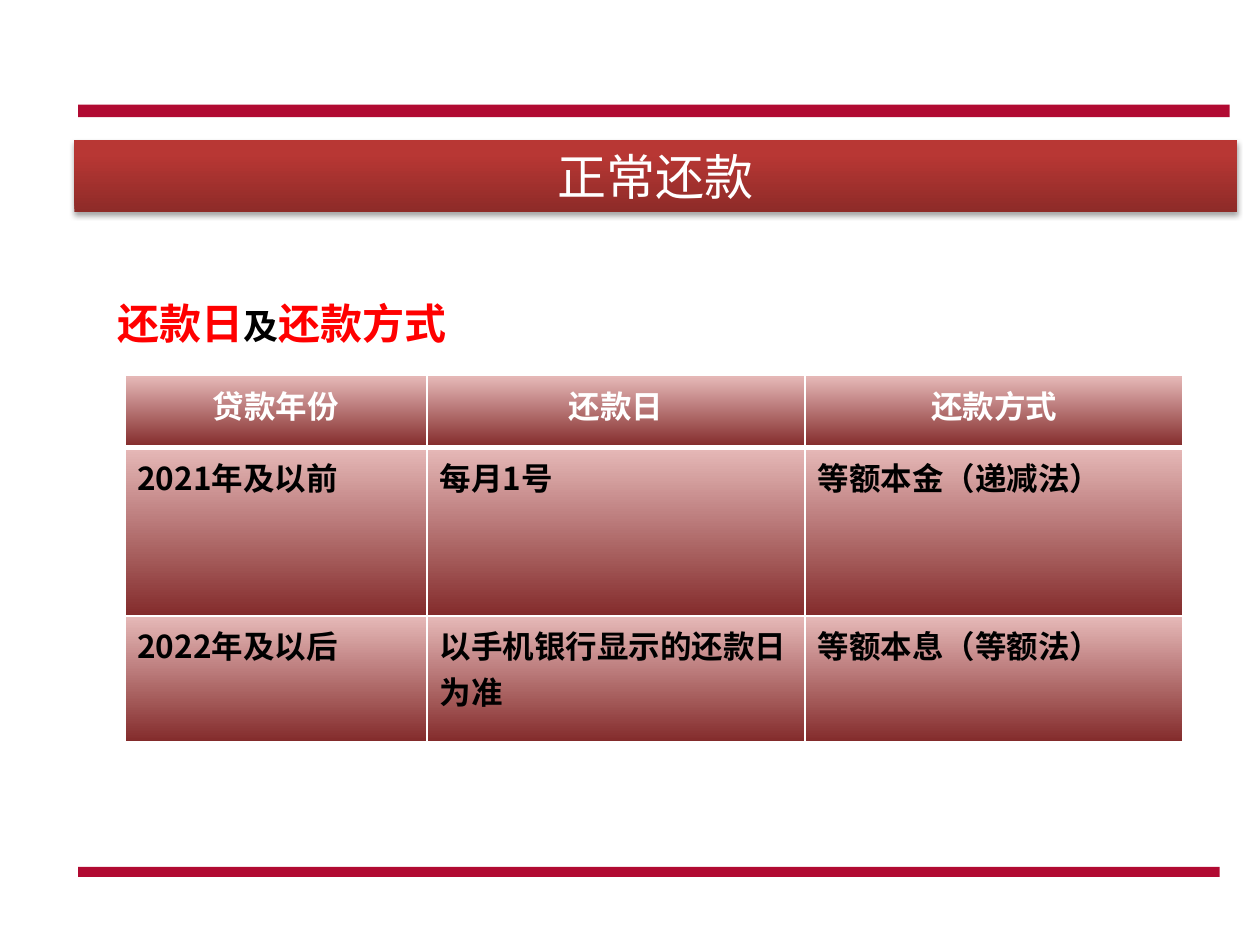
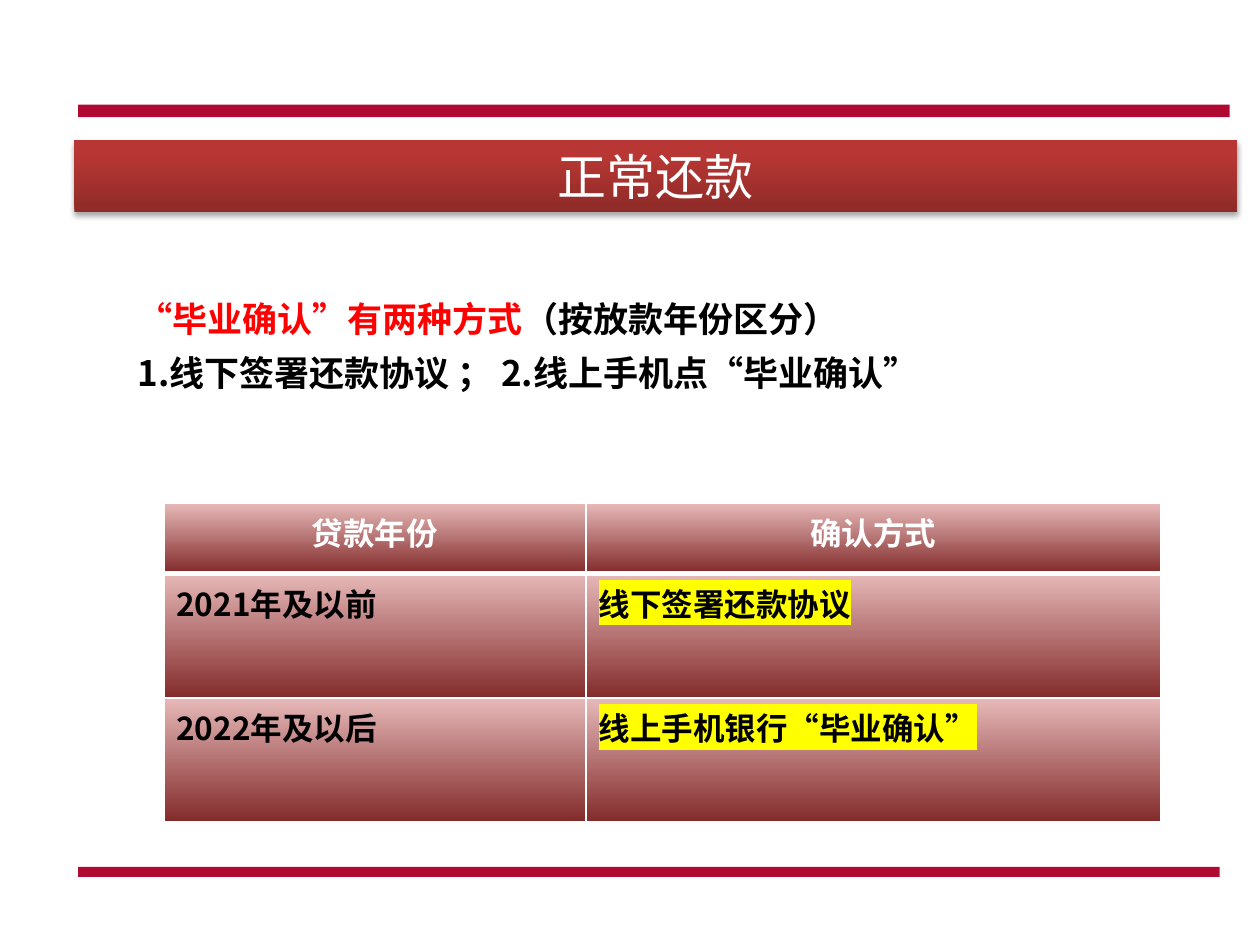
from lxml import etree
from pptx import Presentation
from pptx import util as u
from pptx.dml.color import RGBColor
from pptx.enum import shapes, text
from pptx.oxml import ns

BAR_RED = RGBColor(0xB1, 0x0A, 0x32)
BAND_DARK = RGBColor(0x8E, 0x2B, 0x28)
BAND_LIGHT = RGBColor(0xB8, 0x37, 0x34)
CELL_LIGHT = RGBColor(0xE6, 0xB9, 0xB8)
CELL_DARK = RGBColor(0x83, 0x2B, 0x2B)
RED = RGBColor(0xFF, 0x00, 0x00)
YELLOW = RGBColor(0xFF, 0xFF, 0x00)
BLACK = RGBColor(0x00, 0x00, 0x00)
WHITE = RGBColor(0xFF, 0xFF, 0xFF)

CJK_FONT = "Noto Sans CJK SC"
LATIN_FONT = "Arial"
UP, DOWN = 90, 270


def add_element(parent, tag, **attributes):
    return etree.SubElement(parent, ns.qn(tag), attributes)


def set_font(font, size, color=None, bold=False, name=CJK_FONT):
    font.size, font.bold, font.name = u.Pt(size), bold, name
    if color is not None:
        font.color.rgb = color
    add_element(font._element, "a:ea", typeface=CJK_FONT)


def set_gradient(fill, start, end, angle, end_position=1.0):
    fill.gradient()
    fill.gradient_angle = angle
    for stop, color, position in zip(fill.gradient_stops, (start, end), (0, end_position)):
        stop.color.rgb = color
        stop.position = position


def add_rectangle(slide, left, top, width, height):
    shape = slide.shapes.add_shape(shapes.MSO_SHAPE.RECTANGLE, u.Inches(left),
                                   u.Inches(top), u.Inches(width), u.Inches(height))
    shape.shadow.inherit = False
    shape.line.fill.background()
    return shape


def add_bar(slide, top, width, height):
    bar = add_rectangle(slide, 0.62, top, width, height)
    bar.fill.solid()
    bar.fill.fore_color.rgb = BAR_RED


def add_band(slide, caption):
    band = add_rectangle(slide, 0.59, 1.11, 9.23, 0.57)
    set_gradient(band.fill, BAND_DARK, BAND_LIGHT, UP, 0.8)
    # Soft shadow below the band
    effects = band._element.spPr.find(ns.qn("a:effectLst"))
    shadow = add_element(effects, "a:outerShdw", blurRad=str(u.Pt(3.1)),
                         dist=str(u.Pt(1.8)), dir="5400000", rotWithShape="0")
    color = add_element(shadow, "a:srgbClr", val=str(BLACK))
    add_element(color, "a:alpha", val="35000")
    paragraph = band.text_frame.paragraphs[0]
    paragraph.text = caption
    paragraph.alignment = text.PP_ALIGN.CENTER
    set_font(paragraph.font, 28, WHITE)


def fill_title(slide, left_inset, lines):
    """Each line is a list of (text, size, color) runs."""
    title = slide.shapes.title
    title.left, title.top = u.Inches(0.59), u.Inches(1.68)
    title.width, title.height = u.Inches(9.23), u.Inches(5.29)
    frame = title.text_frame
    frame.auto_size = text.MSO_AUTO_SIZE.NONE
    frame.vertical_anchor = text.MSO_ANCHOR.TOP
    frame.margin_left, frame.margin_top = u.Inches(left_inset), u.Inches(0.68)
    for index, runs in enumerate(lines):
        paragraph = frame.add_paragraph() if index else frame.paragraphs[0]
        paragraph.alignment = text.PP_ALIGN.LEFT
        paragraph.space_before = u.Pt(7 if index else 0)
        for words, size, color in runs:
            run = paragraph.add_run()
            run.text = words
            set_font(run.font, size, color, bold=True)


def set_borders(cell, bottom_width):
    properties = cell._tc.get_or_add_tcPr()
    for side, width in (("L", 1), ("R", 1), ("T", 1), ("B", bottom_width)):
        line = add_element(properties, f"a:ln{side}", w=str(u.Pt(width)))
        add_element(add_element(line, "a:solidFill"), "a:srgbClr", val=str(WHITE))


def highlight(run):
    mark = etree.Element(ns.qn("a:highlight"))
    add_element(mark, "a:srgbClr", val=str(YELLOW))
    run.font._element.insert(0, mark)


def add_loan_table(slide, left, top, widths, heights, rows, highlighted=()):
    table = slide.shapes.add_table(
        len(heights), len(widths), u.Inches(left), u.Inches(top),
        u.Inches(sum(widths)), u.Inches(sum(heights))).table
    for column, width in zip(table.columns, widths):
        column.width = u.Inches(width)
    for row, height in zip(table.rows, heights):
        row.height = u.Inches(height)
    for row_index, row in enumerate(rows):
        is_header = row_index == 0
        for column_index, words in enumerate(row):
            cell = table.cell(row_index, column_index)
            set_borders(cell, 3 if is_header else 1)
            set_gradient(cell.fill, CELL_LIGHT, CELL_DARK, DOWN)
            paragraph = cell.text_frame.paragraphs[0]
            paragraph.text = words
            if is_header:
                paragraph.alignment = text.PP_ALIGN.CENTER
            marked = words in highlighted
            set_font(paragraph.font, 18, WHITE if is_header else BLACK, bold=True,
                     name=LATIN_FONT if is_header or marked else CJK_FONT)
            if marked:
                highlight(paragraph.runs[0])


def add_repayment_slide(presentation):
    slide = presentation.slides.add_slide(presentation.slide_layouts[5])
    add_bar(slide, 0.83, 9.14, 0.1)
    add_bar(slide, 6.88, 9.06, 0.08)
    add_band(slide, "正常还款")
    return slide


def main():
    presentation = Presentation()
    presentation.slide_width, presentation.slide_height = u.Inches(10), u.Inches(7.5)

    # Repayment day and method
    slide = add_repayment_slide(presentation)
    fill_title(slide, 0.34, [
        [("还款日", 24, RED), ("及", 20, BLACK), ("还款方式", 24, RED)]])
    add_loan_table(slide, 0.99, 2.98, (2.4, 3, 3), (0.57, 1.34, 1), (
        ("贷款年份", "还款日", "还款方式"),
        ("2021年及以前", "每月1号", "等额本金（递减法）"),
        ("2022年及以后", "以手机银行显示的还款日为准", "等额本息（等额法）")))

    # Graduation confirmation
    slide = add_repayment_slide(presentation)
    fill_title(slide, 0.5, [
        [("“毕业确认”有两种方式", 20, RED), ("（按放款年份区分）", 20, BLACK)],
        [("1.线下签署还款协议 ； 2.线上手机点“毕业确认”", 20, BLACK)]])
    offline, online = "线下签署还款协议", "线上手机银行“毕业确认”"
    add_loan_table(slide, 1.3, 3.99, (3.35, 4.56), (0.56, 0.99, 0.98), (
        ("贷款年份", "确认方式"),
        ("2021年及以前", offline),
        ("2022年及以后", online)), highlighted=(offline, online))

    presentation.save("out.pptx")


if __name__ == "__main__":
    main()
